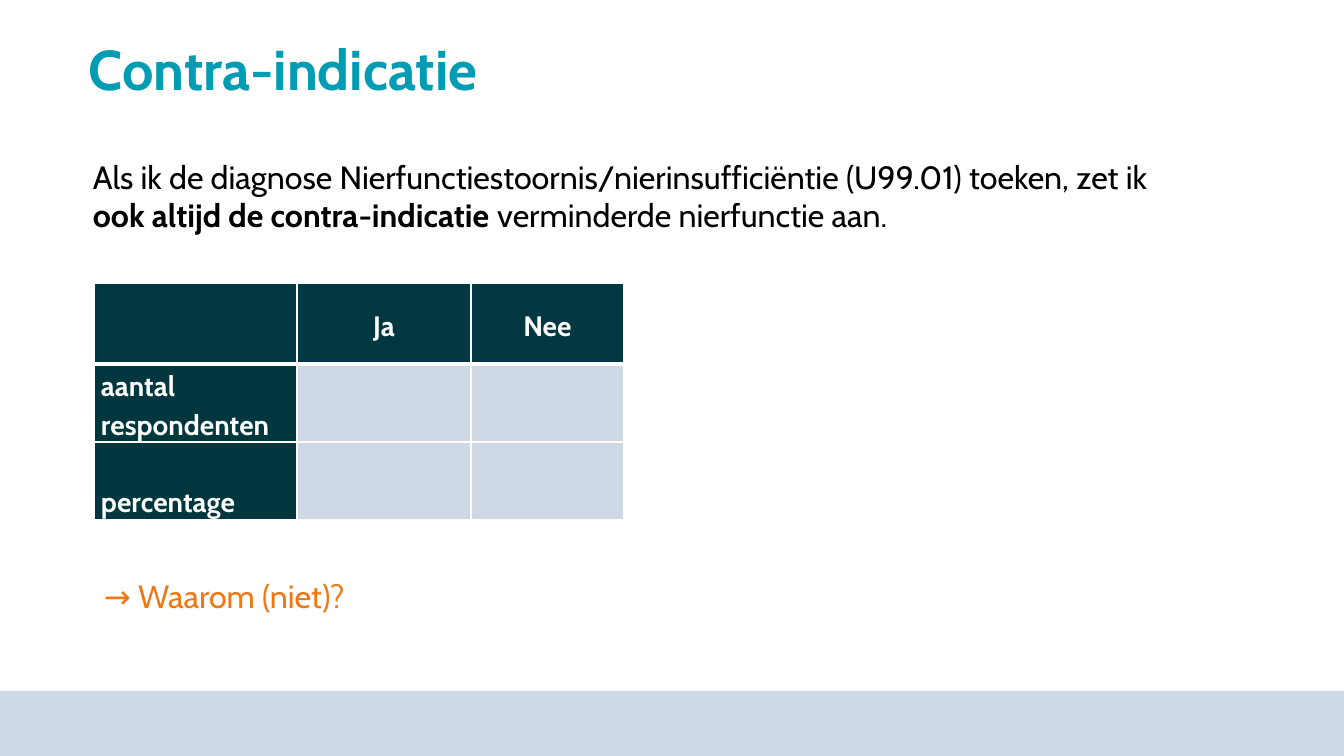
from lxml.etree import SubElement
from pptx import Presentation
from pptx.dml.color import RGBColor
from pptx.enum.shapes import MSO_SHAPE as Shape
from pptx.enum.text import MSO_ANCHOR as Anchor, PP_ALIGN as Align
from pptx.oxml.ns import qn
from pptx.util import Pt

PX = 914400 / 100.8
WHITE = RGBColor(255, 255, 255)
BLACK = RGBColor(0, 0, 0)
TEAL = RGBColor(0, 156, 180)
HEADER = RGBColor(0, 55, 65)
ROW_LABEL = RGBColor(0, 55, 62)
PALE = RGBColor(206, 217, 229)
ORANGE = RGBColor(240, 120, 20)

COLUMN_WIDTHS = [203, 174, 153]
ROW_HEIGHTS = [81, 78, 78]
ANSWERS = [
    ["", "Ja", "Nee"],
    ["aantal\nrespondenten", "", ""],
    ["percentage", "", ""],
]


def px(length):
    return round(length * PX)


def apply(target, values):
    for name, value in values.items():
        setattr(target, name, value)


def add_run(paragraph, text, size, color, bold=False):
    run = paragraph.add_run()
    run.text = text
    apply(run.font, {"name": "Cabin", "size": Pt(size), "bold": bold})
    run.font.color.rgb = color


def add_text(slide, box, runs, size, color, anchor=Anchor.TOP, indent=0, spacing=1.0):
    frame = slide.shapes.add_textbox(*map(px, box)).text_frame
    apply(frame, {"word_wrap": True, "vertical_anchor": anchor})
    paragraph = frame.paragraphs[0]
    paragraph.line_spacing = spacing
    paragraph._p.get_or_add_pPr().set("marL", str(px(indent)))
    for text, bold in runs:
        add_run(paragraph, text, size, color, bold)


def add_footer_band(slide, box):
    band = slide.shapes.add_shape(Shape.RECTANGLE, *map(px, box))
    band.shadow.inherit = False
    band.fill.solid()
    band.fill.fore_color.rgb = PALE
    band.line.fill.background()


def add_borders(cell, widths):
    properties = cell._tc.get_or_add_tcPr()
    for side, width in widths.items():
        line = SubElement(properties, qn(f"a:ln{side}"), w=str(Pt(width)))
        fill = SubElement(line, qn("a:solidFill"))
        SubElement(fill, qn("a:srgbClr"), val=str(WHITE))


def fill_cell(cell, text, row, column):
    is_header = row == 0
    add_borders(cell, {"L": 1, "R": 1, "T": 3 if row == 1 else 1, "B": 3 if is_header else 1})
    cell.fill.solid()
    cell.fill.fore_color.rgb = HEADER if is_header else PALE if column else ROW_LABEL
    apply(cell, {
        "margin_left": px(7), "margin_right": px(7), "margin_top": 0, "margin_bottom": 0,
        "vertical_anchor": Anchor.MIDDLE if is_header else Anchor.BOTTOM,
    })
    if not text:
        return
    frame = cell.text_frame
    for index, line in enumerate(text.split("\n")):
        paragraph = frame.add_paragraph() if index else frame.paragraphs[0]
        apply(paragraph, {"line_spacing": 1.15, "alignment": Align.CENTER if is_header else Align.LEFT})
        add_run(paragraph, line, 20, WHITE, True)


def add_answer_table(slide, left, top):
    box = left, top, sum(COLUMN_WIDTHS), sum(ROW_HEIGHTS)
    table = slide.shapes.add_table(len(ROW_HEIGHTS), len(COLUMN_WIDTHS), *map(px, box)).table
    for column, width in zip(table.columns, COLUMN_WIDTHS):
        column.width = px(width)
    for row, height in zip(table.rows, ROW_HEIGHTS):
        row.height = px(height)
    for row, texts in enumerate(ANSWERS):
        for column, text in enumerate(texts):
            fill_cell(table.cell(row, column), text, row, column)


def build_question_slide(slide, width, height):
    add_footer_band(slide, (0, height - 65, width, 65))
    add_text(slide, (79, 36, 1077, 72), [("Contra-indicatie", True)], 40, TEAL,
             anchor=Anchor.MIDDLE, spacing=0.9)
    add_answer_table(slide, 94, 283)
    statement = [
        ("Als ik de diagnose Nierfunctiestoornis/nierinsufficiëntie (U99.01) toeken, zet ik ", False),
        ("ook altijd de contra-indicatie ", True),
        ("verminderde nierfunctie aan.", False),
    ]
    add_text(slide, (33, 152, 1153, 127), statement, 23, BLACK, indent=50)
    add_text(slide, (94, 571, 672, 49), [("→ Waarom (niet)?", False)], 23, ORANGE)


def main():
    presentation = Presentation()
    width, height = 1344, 756
    apply(presentation, {"slide_width": px(width), "slide_height": px(height)})
    slide = presentation.slides.add_slide(presentation.slide_layouts[6])
    build_question_slide(slide, width, height)
    presentation.save("out.pptx")


if __name__ == "__main__":
    main()
